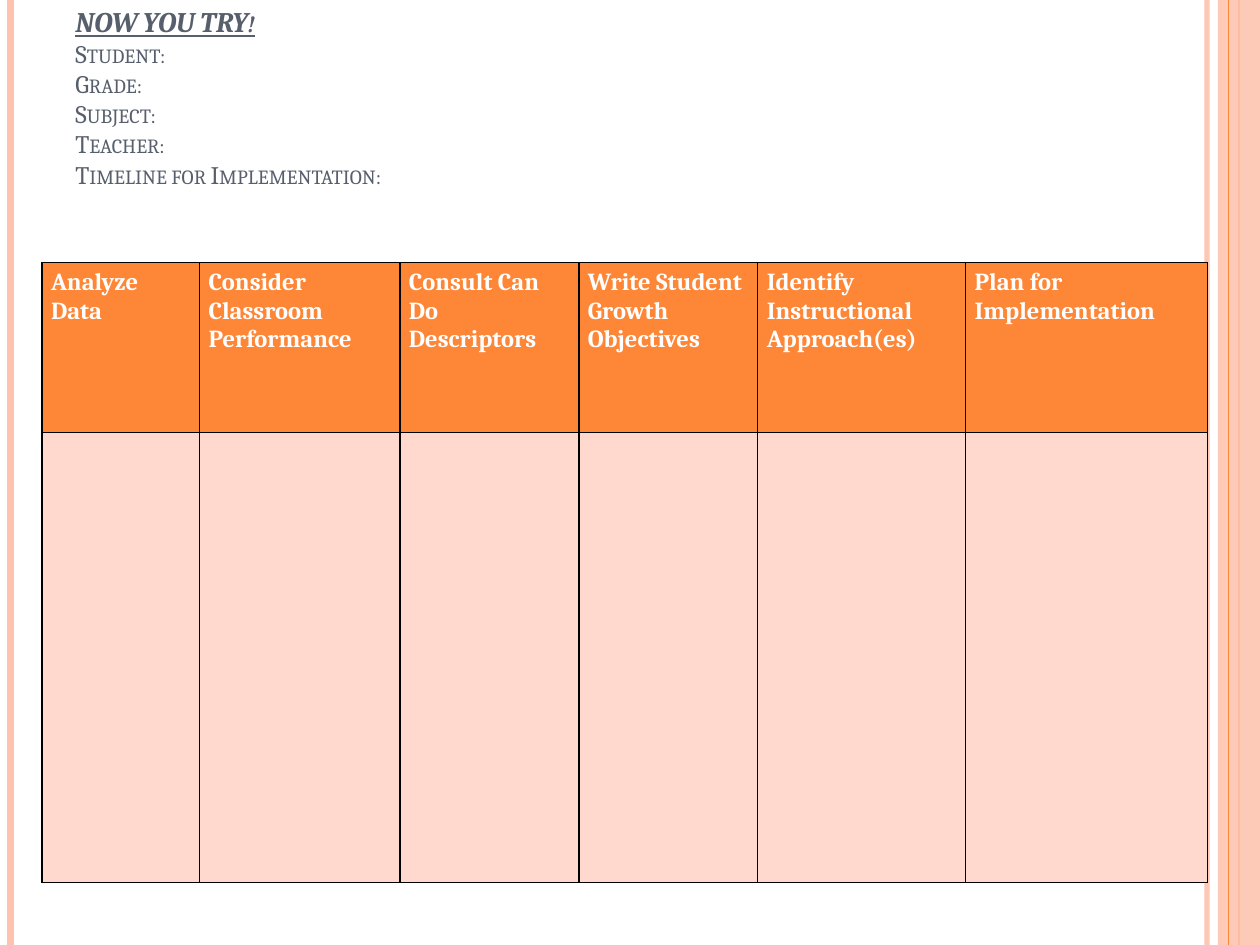
from dataclasses import dataclass

from lxml import etree
from pptx import Presentation
from pptx import util as u
from pptx.dml.color import RGBColor
from pptx.enum import shapes, text
from pptx.oxml import ns


@dataclass(frozen=True)
class Theme:
    font: str = "Cambria"
    accent: str = "FE8637"
    stripe: str = "FEC3AE"
    body_fill: str = "FFD9CE"
    ink: str = "575F6D"
    white: str = "FFFFFF"
    border: str = "000000"
    heading_size: float = 16.2
    field_size: float = 14.4
    table_size: float = 14
    title_pitch: float = 17.25


@dataclass(frozen=True)
class Rule:
    x: float
    color: str
    width: float
    opacity: int = 100


@dataclass(frozen=True)
class Column:
    heading: str
    width: float


THEME = Theme()
PAGE_WIDTH, PAGE_HEIGHT = 720, 540
BACK_RULES = [
    Rule(689.75, THEME.stripe, 3, 93),
    Rule(6, THEME.stripe, 4.5),
    Rule(708, THEME.accent, 1.5),
]
FRONT_RULE = Rule(702, THEME.accent, 0.75)
FIELDS = ["Student:", "Grade:", "Subject:", "Teacher:", "Timeline for Implementation:"]
COLUMNS = [
    Column("Analyze Data", 90),
    Column("Consider Classroom Performance", 114.5),
    Column("Consult Can Do Descriptors", 102.25),
    Column("Write Student Growth Objectives", 102.25),
    Column("Identify Instructional Approach(es)", 118.75),
    Column("Plan for Implementation", 138.25),
]
ROW_HEIGHTS = [97.2, 257.05]


def apply_format(target, values: dict) -> None:
    for name, value in values.items():
        setattr(target, name, value)


def set_opacity(fill_parent, percent: int) -> None:
    color = fill_parent.find(".//" + ns.qn("a:srgbClr"))
    etree.SubElement(color, ns.qn("a:alpha"), val=str(percent * 1000))


def add_span(para, words: str, color: str, **values) -> None:
    span = para.add_run()
    span.text = words
    apply_format(span.font, {"name": THEME.font, **values})
    span.font.color.rgb = RGBColor.from_string(color)


def draw_rule(page, rule: Rule) -> None:
    line = page.shapes.add_connector(
        shapes.MSO_CONNECTOR.STRAIGHT, u.Pt(rule.x), 0, u.Pt(rule.x), u.Pt(PAGE_HEIGHT)
    )
    line.line.color.rgb = RGBColor.from_string(rule.color)
    line.line.width = u.Pt(rule.width)
    properties = line._element.spPr
    if rule.opacity < 100:
        set_opacity(properties, rule.opacity)
    etree.SubElement(properties, ns.qn("a:effectLst"))


def draw_band(page) -> None:
    left = 696
    band = page.shapes.add_shape(
        shapes.MSO_SHAPE.RECTANGLE, u.Pt(left), 0, u.Pt(PAGE_WIDTH - left), u.Pt(PAGE_HEIGHT)
    )
    band.shadow.inherit = False
    band.fill.solid()
    band.fill.fore_color.rgb = RGBColor.from_string(THEME.stripe)
    band.line.fill.background()
    set_opacity(band._element.spPr, 87)


def draw_title(page) -> None:
    box = page.shapes.add_textbox(u.Pt(36), u.Pt(21.6), u.Pt(588), u.Pt(90))
    frame = box.text_frame
    apply_format(frame, {"word_wrap": True, "vertical_anchor": text.MSO_ANCHOR.BOTTOM})
    heading = {"size": u.Pt(THEME.heading_size), "bold": True, "italic": True, "underline": True}
    field = {"size": u.Pt(THEME.field_size)}
    lines = [("NOW YOU TRY!", heading)] + [(label, field) for label in FIELDS]
    for index, (words, values) in enumerate(lines):
        para = frame.add_paragraph() if index else frame.paragraphs[0]
        para.line_spacing = u.Pt(THEME.title_pitch)
        add_span(para, words, THEME.ink, **values)
        para.runs[0].font._element.set("cap", "small")


def style_cell(cell, fill: str) -> None:
    apply_format(cell, {
        "margin_left": u.Pt(5.2), "margin_right": u.Pt(5.2),
        "margin_top": u.Pt(3.6), "margin_bottom": u.Pt(3.6),
    })
    properties = cell._tc.get_or_add_tcPr()
    for side in ("lnL", "lnR", "lnT", "lnB"):
        edge = etree.SubElement(properties, ns.qn("a:" + side), w=str(u.Pt(1)))
        paint = etree.SubElement(edge, ns.qn("a:solidFill"))
        etree.SubElement(paint, ns.qn("a:srgbClr"), val=THEME.border)
    cell.fill.solid()
    cell.fill.fore_color.rgb = RGBColor.from_string(fill)


def draw_table(page) -> None:
    table = page.shapes.add_table(
        len(ROW_HEIGHTS), len(COLUMNS), u.Pt(24), u.Pt(150),
        u.Pt(sum(column.width for column in COLUMNS)), u.Pt(sum(ROW_HEIGHTS)),
    ).table
    for row, height in zip(table.rows, ROW_HEIGHTS):
        row.height = u.Pt(height)
    for index, column in enumerate(COLUMNS):
        table.columns[index].width = u.Pt(column.width)
        header = table.cell(0, index)
        style_cell(header, THEME.accent)
        style_cell(table.cell(1, index), THEME.body_fill)
        add_span(header.text_frame.paragraphs[0], column.heading, THEME.white,
                 size=u.Pt(THEME.table_size), bold=True)


def main() -> None:
    deck = Presentation()
    apply_format(deck, {"slide_width": u.Pt(PAGE_WIDTH), "slide_height": u.Pt(PAGE_HEIGHT)})
    page = deck.slides.add_slide(deck.slide_layouts[6])
    for rule in BACK_RULES:
        draw_rule(page, rule)
    draw_band(page)
    draw_rule(page, FRONT_RULE)
    draw_title(page)
    draw_table(page)
    deck.save("out.pptx")


if __name__ == "__main__":
    main()
